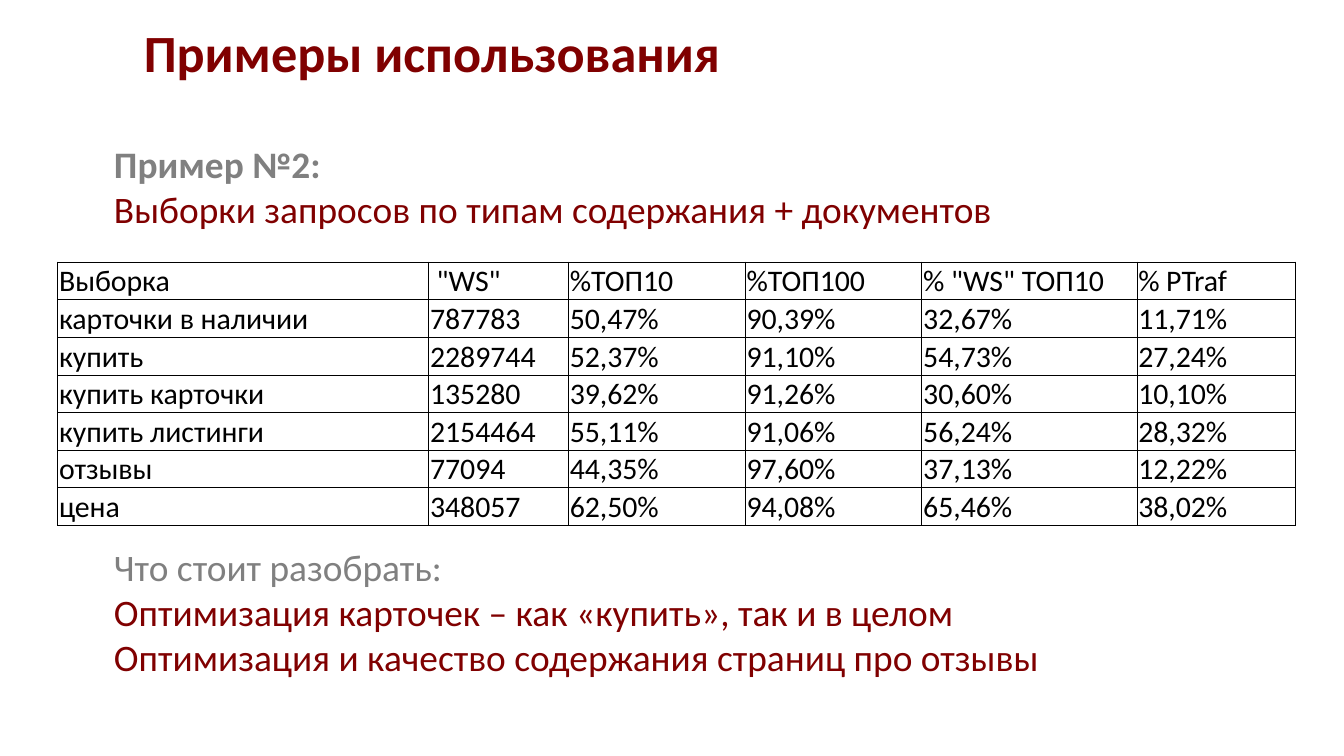
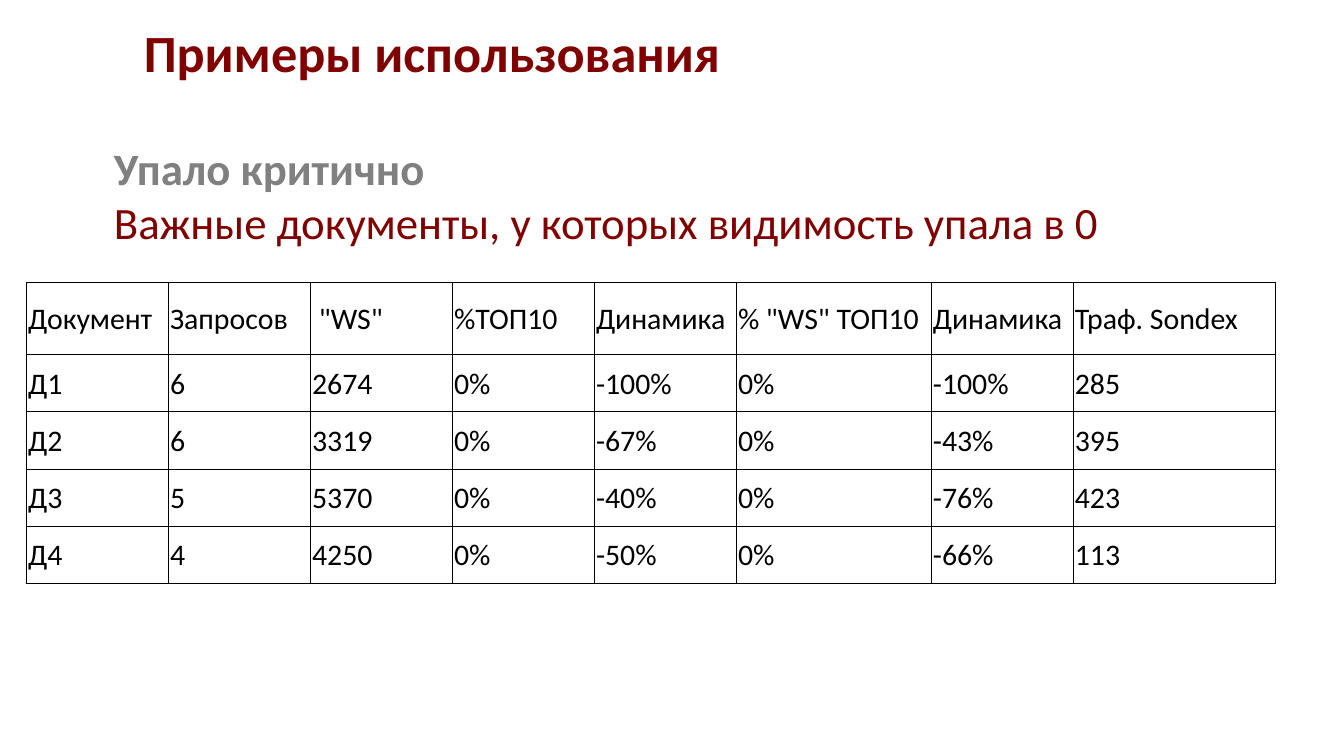
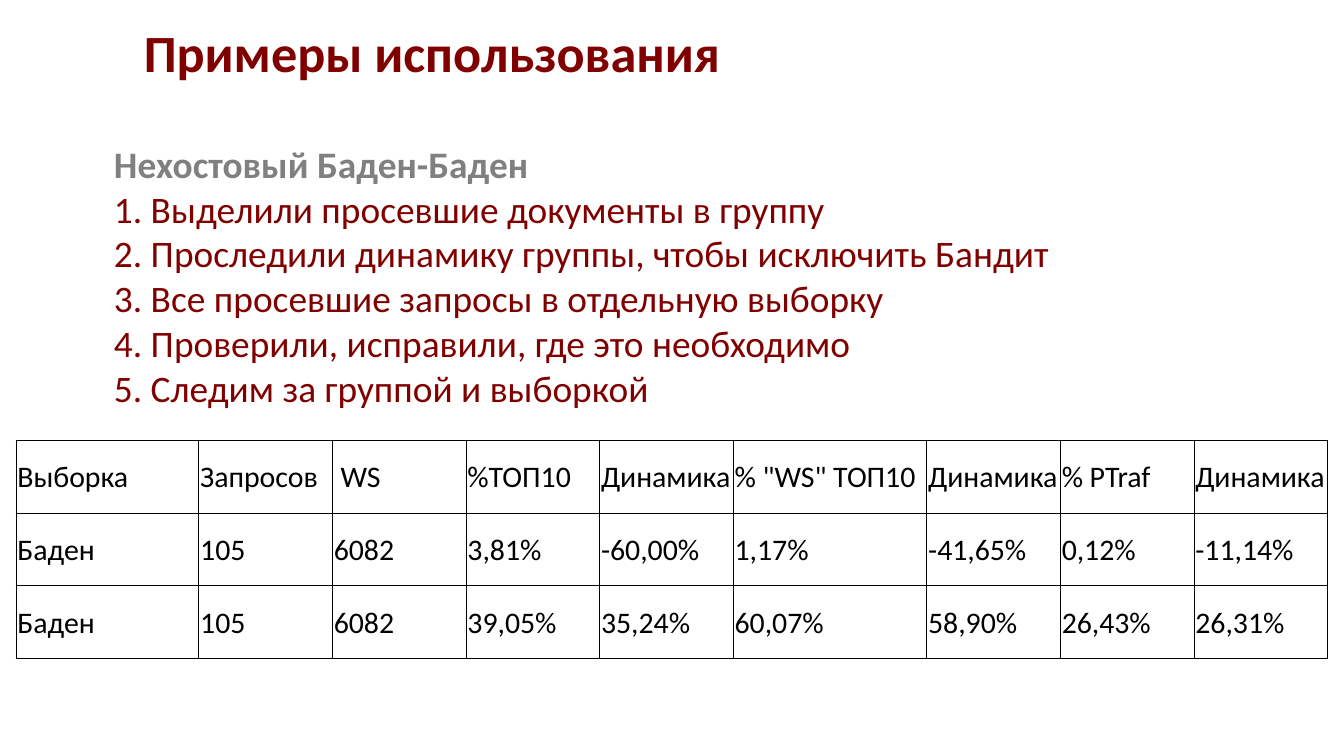
import dataclasses

import pptx
import pptx.dml.color
import pptx.enum.text
import pptx.oxml
import pptx.oxml.ns
import pptx.util

Inches = pptx.util.Inches
Pt = pptx.util.Pt


@dataclasses.dataclass(frozen=True)
class Theme:
    font: str = "Calibri"
    accent: str = "800000"
    muted: str = "808080"
    ink: str = "000000"
    paper: str = "FFFFFF"
    title_size: int = 28
    lead_size: int = 24
    body_size: int = 20
    cell_size: int = 16
    title_leading: int = 18
    border_width: float = 0.5
    cell_inset: float = 0.01


@dataclasses.dataclass(frozen=True)
class Box:
    left: float
    top: float
    width: float
    height: float

    def lengths(self):
        return [Inches(side) for side in (self.left, self.top, self.width, self.height)]


THEME = Theme()
PAGE = Box(0, 0, 10, 10 * 9 / 16)
TITLE = "Примеры использования"

SAMPLES = [
    ["Выборка", ' "WS"', "%ТОП10", "%ТОП100", '% "WS" ТОП10', "% PTraf"],
    ["карточки в наличии", "787783", "50,47%", "90,39%", "32,67%", "11,71%"],
    ["купить", "2289744", "52,37%", "91,10%", "54,73%", "27,24%"],
    ["купить карточки", "135280", "39,62%", "91,26%", "30,60%", "10,10%"],
    ["купить листинги", "2154464", "55,11%", "91,06%", "56,24%", "28,32%"],
    ["отзывы", "77094", "44,35%", "97,60%", "37,13%", "12,22%"],
    ["цена", "348057", "62,50%", "94,08%", "65,46%", "38,02%"],
]
DROPPED = [
    ["Документ", "Запросов", ' "WS"', "%ТОП10", "Динамика", '% "WS" ТОП10', "Динамика", "Траф. Sondex"],
    ["Д1", "6", "2674", "0%", "-100%", "0%", "-100%", "285"],
    ["Д2", "6", "3319", "0%", "-67%", "0%", "-43%", "395"],
    ["Д3", "5", "5370", "0%", "-40%", "0%", "-76%", "423"],
    ["Д4", "4", "4250", "0%", "-50%", "0%", "-66%", "113"],
]
BADEN = [
    ["Выборка", "Запросов", " WS", "%ТОП10", "Динамика", '% "WS" ТОП10', "Динамика", "% PTraf", "Динамика"],
    ["Баден", "105", "6082", "3,81%", "-60,00%", "1,17%", "-41,65%", "0,12%", "-11,14%"],
    ["Баден", "105", "6082", "39,05%", "35,24%", "60,07%", "58,90%", "26,43%", "26,31%"],
]


def write(para, text, size=THEME.body_size, color=THEME.accent, bold=False, before=0, leading=None):
    span = para.add_run()
    span.text = text
    span.font.name = THEME.font
    span.font.size = Pt(size)
    span.font.bold = bold
    span.font.color.rgb = pptx.dml.color.RGBColor.from_string(color)
    if before:
        para.space_before = Pt(before)
    if leading:
        para.line_spacing = Pt(leading)


def add_text_frame(page, box):
    frame = page.shapes.add_textbox(*box.lengths()).text_frame
    frame.word_wrap = True
    frame.auto_size = pptx.enum.text.MSO_AUTO_SIZE.SHAPE_TO_FIT_TEXT
    return frame


def add_title(page, box):
    frame = add_text_frame(page, box)
    frame.vertical_anchor = pptx.enum.text.MSO_ANCHOR.MIDDLE
    frame.margin_left = frame.margin_top = frame.margin_right = frame.margin_bottom = 0
    para = frame.paragraphs[0]
    para._p.get_or_add_pPr().set("marL", str(Inches(1.07)))
    write(para, TITLE, size=THEME.title_size, bold=True, leading=THEME.title_leading)


def add_body(page, box, paragraphs):
    frame = add_text_frame(page, box)
    for index, lines in enumerate(paragraphs):
        para = frame.add_paragraph() if index else frame.paragraphs[0]
        for position, (text, style) in enumerate(lines):
            if position:
                para.add_line_break()
            write(para, text, **style)


def add_borders(cell):
    properties = cell._tc.get_or_add_tcPr()
    for side in ("lnL", "lnR", "lnT", "lnB"):
        properties.append(pptx.oxml.parse_xml(
            f'<a:{side} {pptx.oxml.ns.nsdecls("a")} w="{Pt(THEME.border_width)}">'
            f'<a:solidFill><a:srgbClr val="{THEME.ink}"/></a:solidFill></a:{side}>'))


def share(total, count, fixed):
    rest = (total - sum(fixed.values())) / (count - len(fixed))
    return [Inches(fixed.get(index, rest)) for index in range(count)]


def add_grid(page, box, rows, wide_columns, tall_rows):
    table = page.shapes.add_table(len(rows), len(rows[0]), *box.lengths()).table
    table.first_row = table.horz_banding = False
    for column, width in zip(table.columns, share(box.width, len(rows[0]), wide_columns)):
        column.width = width
    for row, height in zip(table.rows, share(box.height, len(rows), tall_rows)):
        row.height = height
    for cell, text in zip(table.iter_cells(), sum(rows, [])):
        add_borders(cell)
        cell.fill.background()
        cell.vertical_anchor = pptx.enum.text.MSO_ANCHOR.MIDDLE
        cell.margin_left = cell.margin_top = cell.margin_right = Inches(THEME.cell_inset)
        cell.margin_bottom = 0
        write(cell.text_frame.paragraphs[0], text, size=THEME.cell_size, color=THEME.ink)


def add_example(deck, box, paragraphs, body_height, rows, grid, wide_columns, tall_rows):
    page = deck.slides.add_slide(deck.slide_layouts[6])
    page.background.fill.solid()
    page.background.fill.fore_color.rgb = pptx.dml.color.RGBColor.from_string(THEME.paper)
    add_body(page, Box(box.left + 0.75, box.top + 1, 7.64, body_height), paragraphs)
    add_title(page, Box(box.left, box.top + 0.35, 6.73, 0.29))
    add_grid(page, Box(box.left + grid.left, box.top + grid.top, grid.width, grid.height),
             rows, wide_columns, tall_rows)


def main():
    deck = pptx.Presentation()
    deck.slide_width = Inches(PAGE.width)
    deck.slide_height = Inches(PAGE.height)
    heading = {"color": THEME.muted, "bold": True}
    lead = {"size": THEME.lead_size}

    add_example(deck, PAGE, [
        [("Пример №2:", heading), ("Выборки запросов по типам содержания + документов", {})],
        [("Что стоит разобрать:", {"color": THEME.muted, "before": 168})],
        [("Оптимизация карточек – как «купить», так и в целом", {})],
        [("Оптимизация и качество содержания страниц про отзывы", {})],
    ], 4.14, SAMPLES, Box(0.43, 1.95, 9.21, 1.96), {0: 2.76, 1: 1.04, 4: 1.6, 5: 1.18}, {})

    add_example(deck, PAGE, [
        [("Упало критично", heading | lead), ("Важные документы, у которых видимость упала в 0", lead)],
    ], 0.91, DROPPED, Box(0.2, 2.1, 9.29, 2.24), {5: 1.45, 7: 1.5}, {0: 0.54})

    add_example(deck, PAGE, [
        [("Нехостовый Баден-Баден", heading)],
        [("1. Выделили просевшие документы в группу", {})],
        [("2. Проследили динамику группы, чтобы исключить Бандит", {})],
        [("3. Все просевшие запросы в отдельную выборку", {})],
        [("4. Проверили, исправили, где это необходимо", {})],
        [("5. Следим за группой и выборкой", {})],
    ], 2.12, BADEN, Box(0.12, 3.28, 9.76, 1.62), {0: 1.36, 5: 1.44}, {})

    deck.save("out.pptx")


if __name__ == "__main__":
    main()
